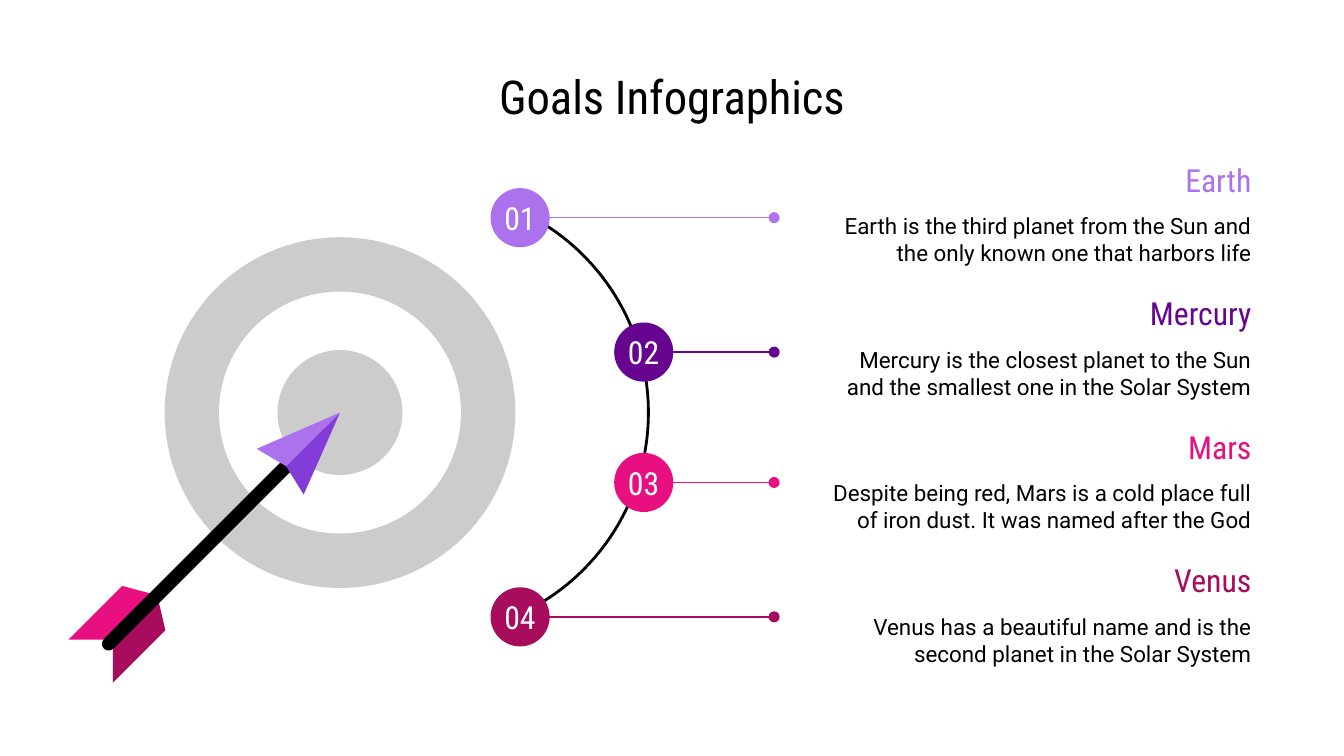
from dataclasses import dataclass

from lxml import etree
from pptx import Presentation
from pptx.dml.color import RGBColor
from pptx.enum.shapes import MSO_CONNECTOR, MSO_SHAPE
from pptx.enum.text import MSO_ANCHOR, PP_ALIGN
from pptx.oxml.ns import qn
from pptx.util import Inches, Pt

ARC, OVAL, PILL = MSO_SHAPE.ARC, MSO_SHAPE.OVAL, MSO_SHAPE.ROUNDED_RECTANGLE
STRAIGHT = MSO_CONNECTOR.STRAIGHT
MIDDLE = MSO_ANCHOR.MIDDLE
CENTER, RIGHT = PP_ALIGN.CENTER, PP_ALIGN.RIGHT


@dataclass(frozen=True)
class Theme:
    black: str = "000000"
    white: str = "FFFFFF"
    gray: str = "CCCCCC"
    lilac: str = "AC71EC"
    violet: str = "833CD8"
    purple: str = "670591"
    pink: str = "E81080"
    wine: str = "A80C5D"
    heading_font: str = "Roboto Condensed"
    body_font: str = "Roboto"
    title_size: int = 25
    heading_size: int = 17
    body_size: int = 12


THEME = Theme()

# Name, description, colour, centre of the number disc
GOALS = [
    ("Earth", "Earth is the third planet from the Sun and the only known one that harbors life",
     THEME.lilac, 3.87, 1.62),
    ("Mercury", "Mercury is the closest planet to the Sun and the smallest one in the Solar System",
     THEME.purple, 4.79, 2.62),
    ("Mars", "Despite being red, Mars is a cold place full of iron dust. It was named after the God",
     THEME.pink, 4.79, 3.59),
    ("Venus", "Venus has a beautiful name and is the second planet in the Solar System",
     THEME.wine, 3.87, 4.59),
]
FIRST_HEADING, LAST_HEADING = 1.10, 4.08
HEADING_STEP = (LAST_HEADING - FIRST_HEADING) / (len(GOALS) - 1)
DISC_SIZE = 0.44
LEADER_END = 5.76
BULLSEYE = (2.53, 3.07)


def write_text(shape, text, *, size, color, font=THEME.heading_font, align=CENTER):
    frame = shape.text_frame
    frame.word_wrap = True
    frame.vertical_anchor = MIDDLE
    frame.margin_left = frame.margin_right = Inches(0.1)
    frame.margin_top = frame.margin_bottom = Inches(0.1)
    para = frame.paragraphs[0]
    para.alignment = align
    span = para.add_run()
    span.text = text
    span.font.name = font
    span.font.size = Pt(size)
    span.font.color.rgb = RGBColor.from_string(color)


def add_text(page, left, top, width, height, text, **style):
    box = page.shapes.add_textbox(Inches(left), Inches(top), Inches(width), Inches(height))
    write_text(box, text, **style)


def paint(shape, color):
    shape.shadow.inherit = False
    shape.fill.solid()
    shape.fill.fore_color.rgb = RGBColor.from_string(color)
    shape.line.fill.background()


def add_centered(page, kind, center, width, height, color):
    x, y = center
    shape = page.shapes.add_shape(kind, Inches(x - width / 2), Inches(y - height / 2),
                                  Inches(width), Inches(height))
    paint(shape, color)
    return shape


def add_polygon(page, points, color):
    start, *rest = [(Inches(x), Inches(y)) for x, y in points]
    builder = page.shapes.build_freeform(*start)
    builder.add_line_segments(rest, close=True)
    paint(builder.convert_to_shape(), color)


def add_leader(page, start, end, y, color):
    leader = page.shapes.add_connector(STRAIGHT, Inches(start), Inches(y), Inches(end), Inches(y))
    leader.line.color.rgb = RGBColor.from_string(color)
    leader.line.width = Pt(0.75)
    etree.SubElement(leader.line._get_or_add_ln(), qn("a:tailEnd"), type="oval")
    etree.SubElement(leader._element.spPr, qn("a:effectLst"))


def add_arc(page, center, size, half_angle):
    arc = add_centered(page, ARC, center, size, size, THEME.white)
    arc.fill.background()
    arc.line.color.rgb = RGBColor.from_string(THEME.black)
    arc.line.width = Pt(1.5)
    # Angles are stored in 60000ths of a degree, adjustments in 100000ths
    arc.adjustments[0] = (360 - half_angle) * 0.6
    arc.adjustments[1] = half_angle * 0.6


def add_goal(page, index, name, description, color, x, y):
    # Leader line and number disc
    add_leader(page, x + 0.15, LEADER_END, y, color)
    disc = add_centered(page, OVAL, (x, y), DISC_SIZE, DISC_SIZE, color)
    write_text(disc, f"{index + 1:02}", size=THEME.heading_size, color=THEME.white)
    disc.text_frame.word_wrap = False

    # Heading and description
    top = FIRST_HEADING + index * HEADING_STEP
    add_text(page, 5.99, top, 3.42, 0.47, name,
             size=THEME.heading_size, color=color, align=RIGHT)
    add_text(page, 5.99, top + 0.38, 3.42, 0.6, description, size=THEME.body_size,
             color=THEME.black, font=THEME.body_font, align=RIGHT)


def add_target(page):
    for size, color in ((2.61, THEME.gray), (1.8, THEME.white), (0.93, THEME.gray)):
        add_centered(page, OVAL, BULLSEYE, size, size, color)


def add_arrow(page):
    # Feathers
    add_polygon(page, [(1.17, 4.43), (1.23, 4.69), (0.84, 5.08), (0.84, 4.76)], THEME.wine)
    add_polygon(page, [(0.91, 4.36), (1.17, 4.43), (0.84, 4.76), (0.51, 4.76)], THEME.pink)

    # Shaft
    shaft = add_centered(page, PILL, (1.59, 4.01), 2.31, 0.1, THEME.black)
    shaft.adjustments[0] = 0.5
    shaft.rotation = -45

    # Tip
    add_polygon(page, [BULLSEYE, (2.26, 3.68), (2.13, 3.47)], THEME.violet)
    add_polygon(page, [BULLSEYE, (2.13, 3.47), (1.91, 3.34)], THEME.lilac)


def main():
    # Widescreen page, 16 to 9
    deck = Presentation()
    deck.slide_width = Inches(10)
    deck.slide_height = deck.slide_width * 9 // 16
    page = deck.slides.add_slide(deck.slide_layouts[6])

    add_arc(page, (3.17, 3.07), 3.31, 65.6)
    for index, goal in enumerate(GOALS):
        add_goal(page, index, *goal)
    add_target(page)
    add_arrow(page)
    add_text(page, 0.5, 0.45, 9, 0.53, "Goals Infographics",
             size=THEME.title_size, color=THEME.black)

    deck.save("out.pptx")


if __name__ == "__main__":
    main()
